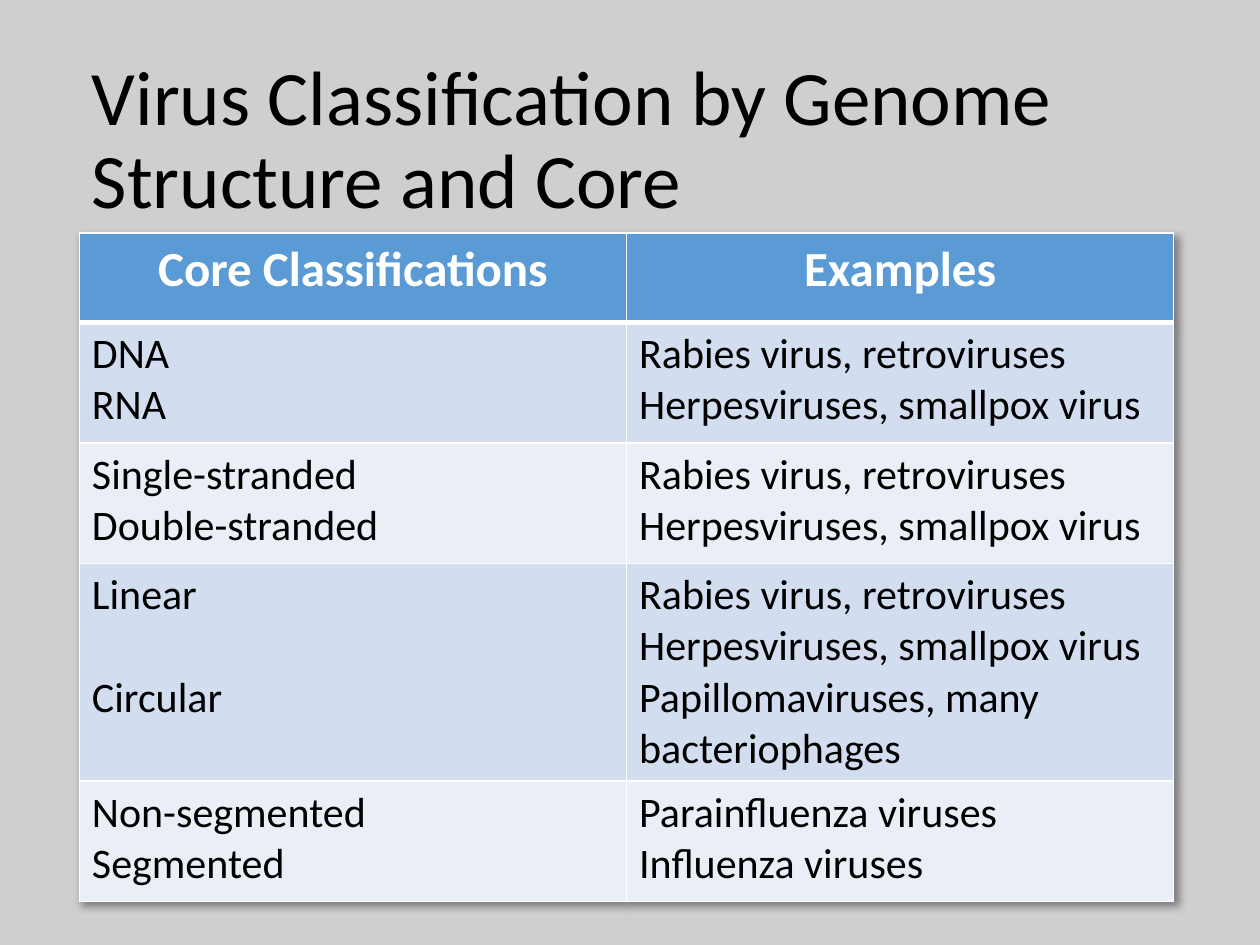
from typing import NamedTuple

from lxml import etree
from pptx import Presentation
from pptx.dml.color import RGBColor
from pptx.enum.text import MSO_ANCHOR, PP_ALIGN
from pptx.oxml.ns import qn
from pptx.util import Cm, Pt

LEFT, CENTER = PP_ALIGN.LEFT, PP_ALIGN.CENTER
MIDDLE = MSO_ANCHOR.MIDDLE
FONT = "Calibri"
COLORS = {
    "back": "D0CECE",
    "head": "5B9BD5",
    "odd": "D2DEEF",
    "even": "EAEFF7",
    "white": "FFFFFF",
    "black": "000000",
}


class Row(NamedTuple):
    height: float
    kinds: list[str]
    samples: list[str]
    gap: float = 0  # points between the kinds


PAIR = ["Rabies virus, retroviruses", "Herpesviruses, smallpox virus"]
ROWS = [
    Row(1.8, ["Core Classifications"], ["Examples"]),
    Row(2.43, ["DNA", "RNA"], PAIR),
    Row(2.43, ["Single-stranded", "Double-stranded"], PAIR),
    Row(3.89, ["Linear", "Circular"],
        PAIR + ["Papillomaviruses, many bacteriophages"], 29.3),
    Row(2.43, ["Non-segmented", "Segmented"],
        ["Parainfluenza viruses", "Influenza viruses"]),
]


def color(name: str) -> RGBColor:
    return RGBColor.from_string(COLORS[name])


def write(frame, lines: list[str], *, size: float, ink: str = "black",
          bold: bool = False, align=LEFT, gap: float = 0,
          pitch: float = 1.0) -> None:
    for i, line in enumerate(lines):
        para = frame.paragraphs[0] if i == 0 else frame.add_paragraph()
        para.alignment = align
        para.line_spacing = pitch
        para.space_before = Pt(gap if i else 0)
        run = para.add_run()
        run.text = line
        font = run.font
        font.name, font.size, font.bold = FONT, Pt(size), bold
        font.color.rgb = color(ink)


def edge(cell, base: float) -> None:
    """Draw white cell borders; base is the width of the lower one."""
    props = cell._tc.get_or_add_tcPr()
    widths = {"a:lnL": 1, "a:lnR": 1, "a:lnT": 1, "a:lnB": base}
    for i, (tag, width) in enumerate(widths.items()):
        line = etree.Element(qn(tag), w=str(Pt(width)))
        fill = etree.SubElement(line, qn("a:solidFill"))
        etree.SubElement(fill, qn("a:srgbClr"), val=COLORS["white"])
        props.insert(i, line)


def shade(table) -> None:
    """Cast a soft shadow to the lower right of the table."""
    group = etree.Element(qn("a:effectLst"))
    cast = etree.SubElement(group, qn("a:outerShdw"), blurRad=str(Pt(4)),
                            dist=str(Pt(3)), dir="2700000", algn="tl",
                            rotWithShape="0")
    tint = etree.SubElement(cast, qn("a:srgbClr"), val=COLORS["black"])
    etree.SubElement(tint, qn("a:alpha"), val="40000")
    table._tbl.tblPr.insert(0, group)


def add_title(slide, text: str) -> None:
    box = slide.shapes.add_textbox(Cm(1.6), Cm(1.02), Cm(23.19), Cm(3.68))
    frame = box.text_frame
    frame.word_wrap = True
    frame.vertical_anchor = MIDDLE
    write(frame, [text], size=44, pitch=0.9)


def add_grid(slide, rows: list[Row]) -> None:
    total = sum(row.height for row in rows)
    table = slide.shapes.add_table(len(rows), 2, Cm(1.6), Cm(4.7),
                                   Cm(22.06), Cm(total)).table
    shade(table)
    for i, row in enumerate(rows):
        table.rows[i].height = Cm(row.height)
        head = i == 0
        tone = "head" if head else "odd" if i % 2 else "even"
        look = (dict(size=28, ink="white", bold=True, align=CENTER)
                if head else dict(size=24))
        for j, lines in enumerate((row.kinds, row.samples)):
            cell = table.cell(i, j)
            cell.fill.solid()
            cell.fill.fore_color.rgb = color(tone)
            edge(cell, 3 if head else 1)
            write(cell.text_frame, lines, gap=0 if j else row.gap, **look)


def main() -> None:
    deck = Presentation()
    deck.slide_width, deck.slide_height = Cm(25.4), Cm(19.05)
    slide = deck.slides.add_slide(deck.slide_layouts[6])
    slide.background.fill.solid()
    slide.background.fill.fore_color.rgb = color("back")
    add_grid(slide, ROWS)
    add_title(slide, "Virus Classification by Genome Structure and Core")
    deck.save("out.pptx")


if __name__ == "__main__":
    main()
